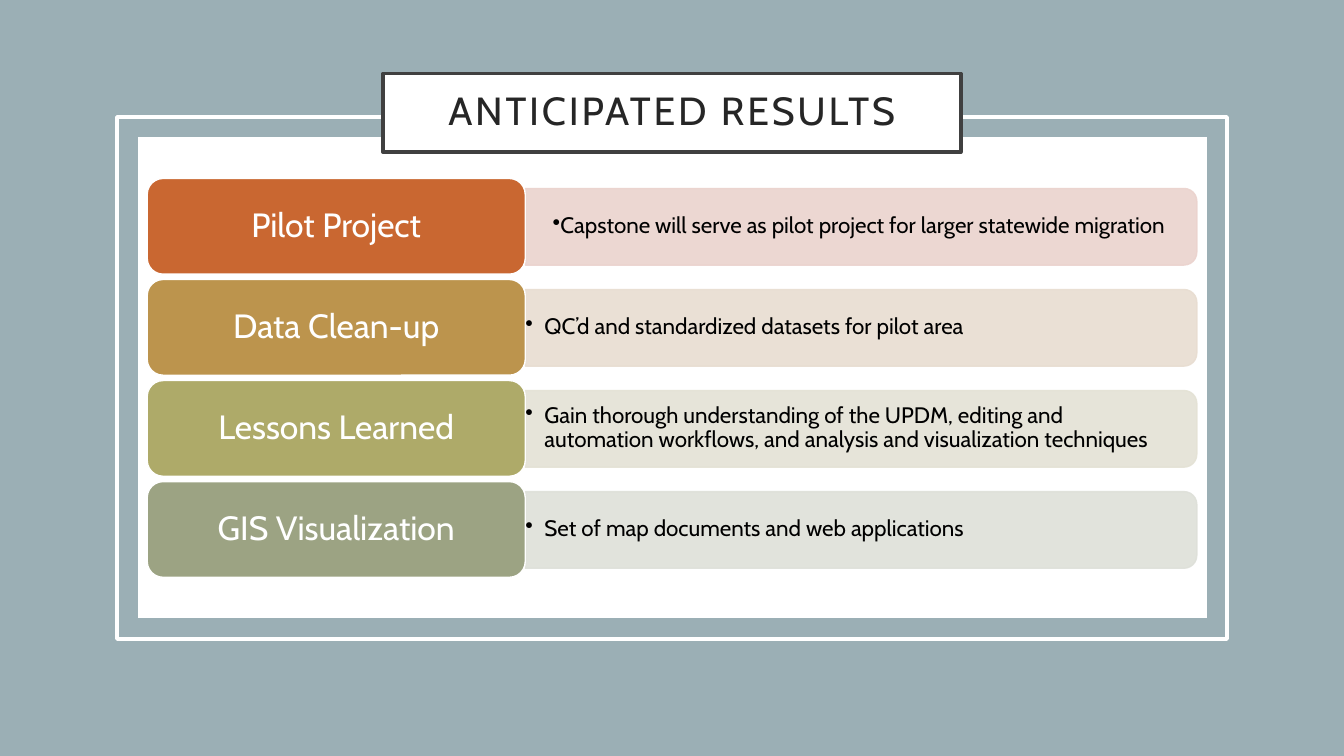
from lxml import etree
from pptx import Presentation, util as u
from pptx.dml.color import RGBColor
from pptx.enum import shapes, text
from pptx.oxml import ns

HUES = {"back": "9BAFB5", "white": "FFFFFF", "edge": "404040",
        "title": "262626", "black": "000000"}
ROWS = [
    ("Pilot Project", "C96731", "EBD3CE", 0.27, 0,
     "Capstone will serve as pilot project for larger statewide migration"),
    ("Data Clean-up", "BC944D", "E8DDD1", 0, 0.19,
     "QC’d and standardized datasets for pilot area"),
    ("Lessons Learned", "AEAA69", "E4E2D5", 0, 0.19,
     "Gain thorough understanding of the UPDM, editing and automation "
     "workflows, and analysis and visualization techniques"),
    ("GIS Visualization", "9CA383", "DEE0D9", 0, 0.19,
     "Set of map documents and web applications"),
]
KIND = shapes.MSO_SHAPE


def apply(item, values):
    """Set each named value on the item."""
    for name, value in values.items():
        setattr(item, name, value)


def add_node(parent, tag, **values):
    """Append a drawing element with the given attributes."""
    node = etree.SubElement(parent, ns.qn(tag))
    for name, value in values.items():
        node.set(name, value)
    return node


def draw(slide, kind, box, fill=None, line=None, width=1.0):
    """Add a flat preset shape in a box given in inches."""
    shape = slide.shapes.add_shape(kind, *map(u.Inches, box))
    shape.shadow.inherit = False
    if fill:
        shape.fill.solid()
        shape.fill.fore_color.rgb = RGBColor.from_string(fill)
    else:
        shape.fill.background()
    if line:
        shape.line.color.rgb = RGBColor.from_string(line)
        shape.line.width = u.Pt(width)
    else:
        shape.line.fill.background()
    return shape


def write(shape, words, size, hue, align, pads):
    """Write one paragraph, centred in height, and return it."""
    frame = shape.text_frame
    sides = ("margin_left", "margin_top", "margin_right", "margin_bottom")
    apply(frame, {"word_wrap": True, "vertical_anchor": text.MSO_ANCHOR.MIDDLE,
                  **dict(zip(sides, map(u.Inches, pads)))})
    para = frame.paragraphs[0]
    apply(para, {"alignment": align, "line_spacing": 0.9})
    run = para.add_run()
    run.text = words
    apply(run.font, {"name": "Cabin", "size": u.Pt(size)})
    run.font.color.rgb = RGBColor.from_string(hue)
    return para


def add_frame(slide, box):
    """Draw the backdrop, the white panel and the outline round it."""
    left, top, width, height = box
    draw(slide, KIND.RECTANGLE, (0, 0, 13.33, 7.5), HUES["back"])
    draw(slide, KIND.RECTANGLE, (left + 0.21, top + 0.2, width - 0.41, height - 0.41),
         HUES["white"])
    draw(slide, KIND.RECTANGLE, box, line=HUES["white"], width=2.5)


def add_bar(slide, box, tint, pad, hang, words):
    """Draw a pale bar, rounded at its right end, with a bullet on it."""
    left, top, width, height = box
    turned = (left + (width - height) / 2, top + (height - width) / 2, height, width)
    bar = draw(slide, KIND.ROUND_2_SAME_RECTANGLE, turned, tint, tint)
    bar.rotation = 90
    for color in bar.element.spPr.iter(ns.qn("a:srgbClr")):
        add_node(color, "a:alpha", val="90000")
    area = (left, top + 0.03, width - 0.04, height - 0.07)
    note = slide.shapes.add_textbox(*map(u.Inches, area))
    para = write(note, words, 16, HUES["black"], text.PP_ALIGN.LEFT,
                 (pad, 0.14, 0.27, 0.14))
    para.level = 1
    props = para._p.get_or_add_pPr()
    props.set("marL", str(u.Inches(hang)))
    props.set("indent", str(-u.Inches(hang)))
    add_node(props, "a:buChar", char="•")


def add_row(slide, box, label, hue, tint, pad, hang, words):
    """Draw one row: the bar on the right and the label on the left."""
    left, top, width, height = box
    split = 3.75
    add_bar(slide, (left + split, top + 0.1, width - split, height - 0.19),
            tint, pad, hang, words)
    tile = draw(slide, KIND.ROUNDED_RECTANGLE, (left, top, split, height),
                hue, HUES["white"])
    write(tile, label, 24, HUES["white"], text.PP_ALIGN.CENTER, (0.1, 0.05, 0.1, 0.05))


def add_list(slide, box):
    """Stack the rows at an equal pitch down the box."""
    left, top, width, height = box
    pitch = height / len(ROWS)
    for index, row in enumerate(ROWS):
        add_row(slide, (left, top + index * pitch, width, 0.95), *row)


def add_title(slide, box):
    """Draw the framed title."""
    plate = draw(slide, KIND.RECTANGLE, box, HUES["white"], HUES["edge"], 2.5)
    para = write(plate, "ANTICIPATED RESULTS", 28, HUES["title"],
                 text.PP_ALIGN.CENTER, (0.2,) * 4)
    para.runs[0].font._element.set("spc", "200")


def main():
    """Build the slide and save it."""
    deck = Presentation()
    apply(deck, {"slide_width": u.Inches(13.33), "slide_height": u.Inches(7.5)})
    slide = deck.slides.add_slide(deck.slide_layouts[6])
    add_frame(slide, (1.16, 1.16, 11.01, 5.18))
    add_list(slide, (1.46, 1.77, 10.41, 4.01))
    add_title(slide, (3.8, 0.73, 5.73, 0.78))
    deck.save("out.pptx")


if __name__ == "__main__":
    main()
